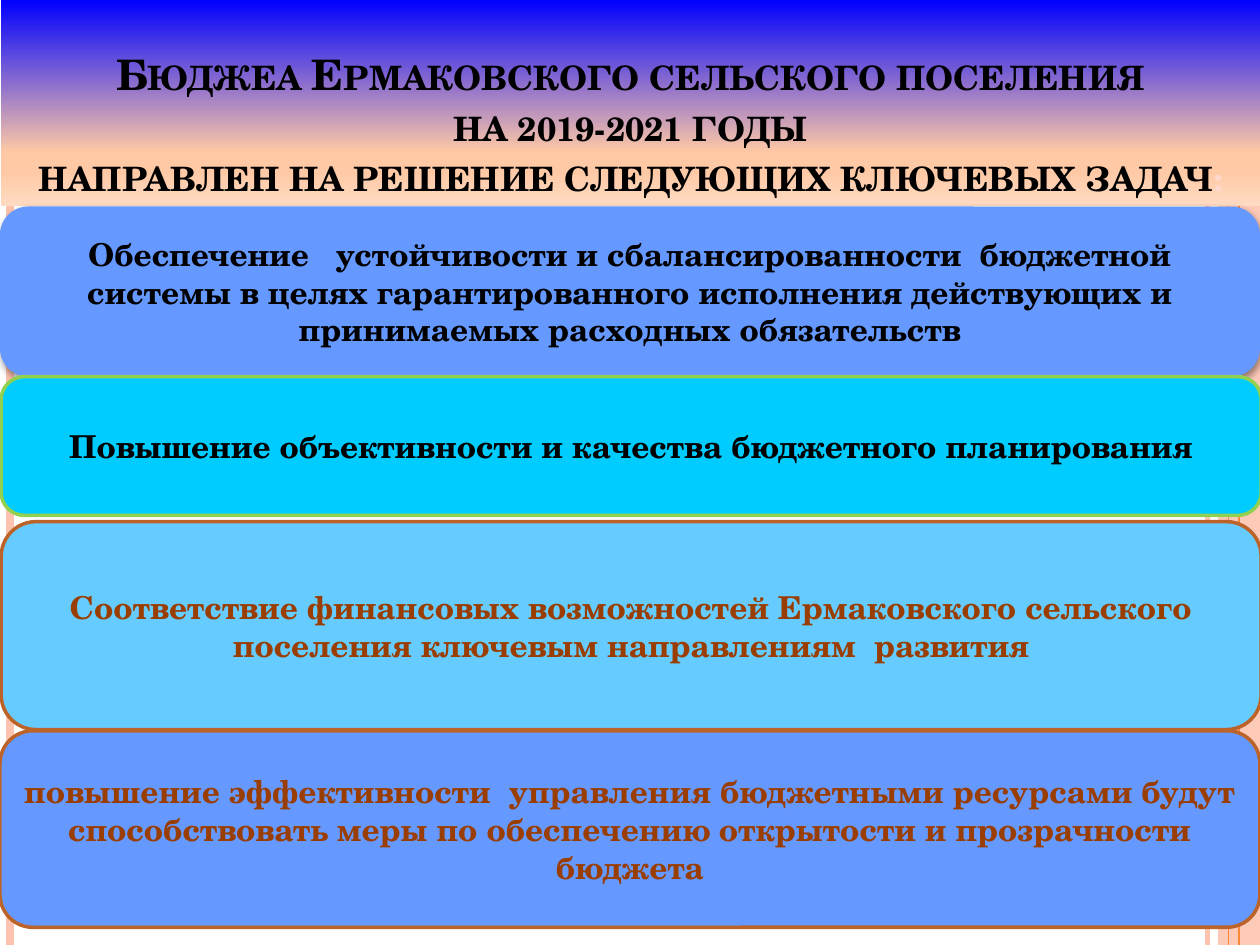
from dataclasses import dataclass

from lxml import etree
from pptx import Presentation
from pptx.dml.color import RGBColor
from pptx.enum.shapes import MSO_CONNECTOR, MSO_SHAPE
from pptx.enum.text import MSO_ANCHOR, MSO_AUTO_SIZE, PP_ALIGN
from pptx.oxml import parse_xml
from pptx.oxml.ns import nsdecls, qn
from pptx.util import Pt

STRAIGHT = MSO_CONNECTOR.STRAIGHT
RECTANGLE = MSO_SHAPE.RECTANGLE
ROUNDED = MSO_SHAPE.ROUNDED_RECTANGLE
BOTTOM = MSO_ANCHOR.BOTTOM
MIDDLE = MSO_ANCHOR.MIDDLE
NO_AUTOFIT = MSO_AUTO_SIZE.NONE
CENTER = PP_ALIGN.CENTER
TITLE_ONLY = 5


@dataclass(frozen=True)
class Theme:
    """Colours, font and type sizes of the slide."""

    font: str = "TeX Gyre Schola"
    title_size: int = 24
    body_size: int = 18
    black: str = "000000"
    brown: str = "9A3D01"
    rust: str = "BC6329"
    green: str = "92D050"
    blue: str = "6699FF"
    cyan: str = "00CCFF"
    sky: str = "66CCFF"
    pink: str = "FEC3AE"
    orange: str = "FE8637"
    pale: str = "FFD9CE"
    title_stops: tuple = ((0, "0000FF"), (74, "FFC9A5"), (83, "FFC9A5"), (100, "FFDBC3"))


THEME = Theme()
WIDTH, HEIGHT = 720, 540

STRIPES = (
    (690, THEME.pink, 3),
    (5.76, THEME.pink, 4.5),
    (708, THEME.orange, 1.5),
    (702, THEME.orange, 0.75),
)

TITLE = (
    "Бюджеа Ермаковского сельского поселения\v"
    "на 2019-2021 годы\v"
    "направлен на решение следующих ключевых задач"
)

TASKS = (
    (0, 118, 97.2, THEME.blue, None, THEME.black,
     "Обеспечение   устойчивости и сбалансированности  бюджетной системы в целях "
     "гарантированного исполнения действующих и принимаемых расходных обязательств"),
    (0.7, 215.3, 79.2, THEME.cyan, THEME.green, THEME.black,
     "Повышение объективности и качества бюджетного планирования"),
    (0.7, 298.1, 118.8, THEME.sky, THEME.rust, THEME.brown,
     "Соответствие финансовых возможностей Ермаковского сельского поселения "
     "ключевым направлениям  развития"),
    (0, 417.6, 112.3, THEME.blue, THEME.rust, THEME.brown,
     "повышение эффективности  управления бюджетными ресурсами будут способствовать "
     "меры по обеспечению открытости и прозрачности бюджета"),
)


def rgb(value):
    """Turn a hex string into a colour."""
    return RGBColor.from_string(value)


def format_paragraph(paragraph, size, color):
    """Centre a paragraph and set its bold font."""
    paragraph.alignment = CENTER
    font = paragraph.font
    font.name, font.size, font.bold = THEME.font, Pt(size), True
    font.color.rgb = rgb(color)


def add_stripe(slide, x, color, width):
    """Draw a full-height vertical line."""
    stripe = slide.shapes.add_connector(STRAIGHT, Pt(x), Pt(0), Pt(x), Pt(HEIGHT))
    stripe.line.color.rgb = rgb(color)
    stripe.line.width = Pt(width)
    etree.SubElement(stripe._element.spPr, qn("a:effectLst"))


def add_side_band(slide):
    """Draw the translucent band along the right edge."""
    band = slide.shapes.add_shape(RECTANGLE, Pt(696), Pt(0), Pt(24), Pt(HEIGHT))
    band.shadow.inherit = False
    band.line.fill.background()
    band.fill.solid()
    band.fill.fore_color.rgb = rgb(THEME.pink)
    color = band._element.spPr.find(".//" + qn("a:srgbClr"))
    etree.SubElement(color, qn("a:alpha"), val="87000")


def fill_gradient(shape, stops):
    """Fill a placeholder with a top-to-bottom gradient."""
    marks = "".join(
        f'<a:gs pos="{position * 1000}"><a:srgbClr val="{color}"/></a:gs>'
        for position, color in stops
    )
    shape._element.spPr.append(parse_xml(
        f'<a:gradFill {nsdecls("a")}><a:gsLst>{marks}</a:gsLst>'
        '<a:lin ang="5400000" scaled="0"/></a:gradFill>'
    ))


def format_title(slide):
    """Place the title in front of the stripes and format it in small caps."""
    title = slide.shapes.title
    slide.shapes._spTree.append(title._element)
    title.left, title.top, title.width, title.height = Pt(0.7), Pt(0), Pt(719.3), Pt(118)
    fill_gradient(title, THEME.title_stops)
    frame = title.text_frame
    frame.word_wrap = True
    frame.auto_size = NO_AUTOFIT
    frame.vertical_anchor = BOTTOM
    paragraph = frame.paragraphs[0]
    paragraph.text = TITLE
    format_paragraph(paragraph, THEME.title_size, THEME.black)
    paragraph.line_spacing = 1.0
    colon = paragraph.add_run()
    colon.text = ":"
    colon.font.color.rgb = rgb(THEME.pale)
    for run in paragraph.runs:
        run._r.get_or_add_rPr().set("cap", "small")


def add_soft_shadow(shape):
    """Give a shape a soft shadow below it."""
    effects = shape._element.spPr.find(qn("a:effectLst"))
    effects.append(parse_xml(
        f'<a:outerShdw {nsdecls("a")} blurRad="{Pt(4)}" dist="{Pt(1.6)}" dir="5400000" '
        'rotWithShape="0"><a:srgbClr val="000000"><a:alpha val="42000"/></a:srgbClr>'
        '</a:outerShdw>'
    ))


def add_task(slide, left, top, height, fill, outline, color, text):
    """Add a rounded task box; a box without an outline has a shadow."""
    box = slide.shapes.add_shape(ROUNDED, Pt(left), Pt(top), Pt(WIDTH), Pt(height))
    box.shadow.inherit = False
    box.fill.solid()
    box.fill.fore_color.rgb = rgb(fill)
    if outline:
        box.line.color.rgb = rgb(outline)
        box.line.width = Pt(2)
    else:
        box.line.fill.background()
        add_soft_shadow(box)
    frame = box.text_frame
    frame.word_wrap = True
    frame.vertical_anchor = MIDDLE
    frame.text = text
    format_paragraph(frame.paragraphs[0], THEME.body_size, color)


def main():
    """Build and save the slide."""
    presentation = Presentation()
    presentation.slide_width, presentation.slide_height = Pt(WIDTH), Pt(HEIGHT)
    slide = presentation.slides.add_slide(presentation.slide_layouts[TITLE_ONLY])
    add_side_band(slide)
    for stripe in STRIPES:
        add_stripe(slide, *stripe)
    format_title(slide)
    for task in TASKS:
        add_task(slide, *task)
    presentation.save("out.pptx")


if __name__ == "__main__":
    main()
